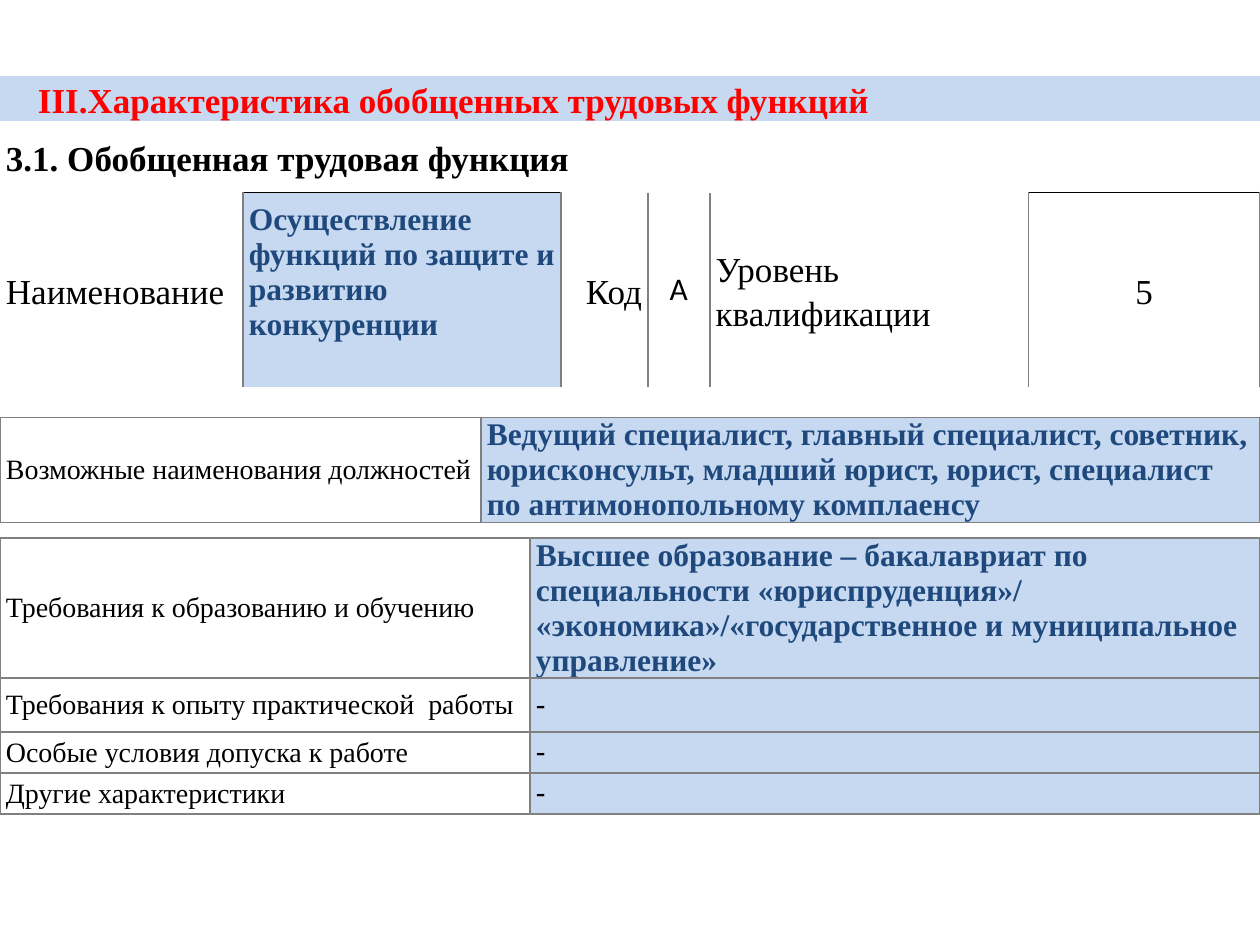
from dataclasses import dataclass

from lxml import etree
from pptx import Presentation
from pptx.dml.color import RGBColor
from pptx.enum.text import MSO_ANCHOR, PP_ALIGN
from pptx.oxml.ns import qn
from pptx.util import Pt

MIDDLE = MSO_ANCHOR.MIDDLE
LEFT, CENTER, RIGHT = PP_ALIGN.LEFT, PP_ALIGN.CENTER, PP_ALIGN.RIGHT
SCALE = 914400 / 126
SIDES = {"l": "a:lnL", "r": "a:lnR", "t": "a:lnT", "b": "a:lnB"}


@dataclass(frozen=True)
class Theme:
    serif: str = "Times New Roman"
    sans: str = "Calibri"
    black: str = "000000"
    red: str = "FF0000"
    navy: str = "1F497D"
    pale_blue: str = "C6D9F1"
    gray: str = "808080"
    large: int = 20
    medium: int = 18
    small: int = 16
    spacer: int = 6


THEME = Theme()
GRID = dict.fromkeys("lrtb", THEME.gray)
UPRIGHTS = dict.fromkeys("lr", THEME.gray)
FRAME = {**GRID, "t": THEME.black}

BASE = {"size": THEME.large, "font": THEME.serif, "color": THEME.black, "bold": False,
        "align": LEFT, "spacing": 1.0, "indent": 0, "bottom": 0, "fill": None, "borders": {}}
SPACED = {**BASE, "spacing": 1.15}
BANNER = {**SPACED, "color": THEME.red, "bold": True, "indent": 32, "fill": THEME.pale_blue}
HEADING = {**SPACED, "bold": True}
LABEL = {**BASE, "size": THEME.small, "borders": GRID}
ANSWER = {**BASE, "size": THEME.medium, "color": THEME.navy, "bold": True,
          "fill": THEME.pale_blue, "borders": GRID}
DASH = {**BASE, "size": THEME.medium, "font": THEME.sans, "fill": THEME.pale_blue, "borders": GRID}

COLUMNS = [243, 238, 49, 31, 87, 62, 319, 231]
ROWS = [
    (44, [(8, ["III.Характеристика обобщенных трудовых функций"], BANNER)]),
    (72, [(8, ["3.1. Обобщенная трудовая функция"], HEADING)]),
    (194, [
        (1, ["Наименование"], {**SPACED, "borders": {"r": THEME.gray}}),
        (3, ["Осуществление", "функций по защите и", "развитию", "конкуренции"],
         {**ANSWER, "borders": FRAME, "bottom": 35}),
        (1, ["Код"], {**SPACED, "align": RIGHT, "borders": UPRIGHTS}),
        (1, ["А"], {**BASE, "size": THEME.medium, "font": THEME.sans,
                    "align": CENTER, "borders": UPRIGHTS}),
        (1, ["Уровень квалификации"], {**SPACED, "borders": UPRIGHTS}),
        (1, ["5"], {**SPACED, "align": CENTER, "borders": FRAME}),
    ]),
    (15, [(8, [], BASE)]),
    (16, [(8, [], {**BASE, "borders": {"b": THEME.gray}})]),
    (104, [
        (2, ["Возможные наименования должностей"], LABEL),
        (6, ["Ведущий специалист, главный специалист, советник, юрисконсульт, "
             "младший юрист, юрист, специалист по антимонопольному комплаенсу"], ANSWER),
    ]),
    (16, [(8, [], {**BASE, "borders": {"t": THEME.gray, "b": THEME.gray}})]),
    (140, [
        (3, ["Требования к образованию и обучению"], LABEL),
        (5, ["Высшее образование – бакалавриат по специальности «юриспруденция»/",
             "«экономика»/«государственное и муниципальное управление»"], ANSWER),
    ]),
    (54, [(3, ["Требования к опыту практической  работы"], LABEL), (5, ["-"], DASH)]),
    (41, [(3, ["Особые условия допуска к работе"], LABEL), (5, ["-"], DASH)]),
    (41, [(3, ["Другие характеристики"], LABEL), (5, ["-"], DASH)]),
]


def px(length):
    return round(length * SCALE)


def set_values(target, values):
    for name, value in values.items():
        setattr(target, name, value)


def set_borders(cell, borders):
    properties = cell._tc.get_or_add_tcPr()
    for position, (side, tag) in enumerate(SIDES.items()):
        line = etree.Element(qn(tag), w=str(Pt(1)))
        if side in borders:
            fill = etree.SubElement(line, qn("a:solidFill"))
            etree.SubElement(fill, qn("a:srgbClr"), val=borders[side])
        else:
            etree.SubElement(line, qn("a:noFill"))
        properties.insert(position, line)


def format_cell(cell, style, borders):
    set_values(cell, {"vertical_anchor": MIDDLE, "margin_left": px(6), "margin_right": px(6),
                      "margin_top": 0, "margin_bottom": px(style["bottom"])})
    if style["fill"]:
        cell.fill.solid()
        cell.fill.fore_color.rgb = RGBColor.from_string(style["fill"])
    else:
        cell.fill.background()
    set_borders(cell, borders)
    paragraph = cell.text_frame.paragraphs[0]
    etree.SubElement(paragraph._p, qn("a:endParaRPr"), sz=str(THEME.spacer * 100))


def write_text(cell, lines, style):
    frame = cell.text_frame
    for index, line in enumerate(lines):
        paragraph = frame.add_paragraph() if index else frame.paragraphs[0]
        set_values(paragraph, {"alignment": style["align"], "line_spacing": style["spacing"]})
        if style["indent"]:
            paragraph._p.get_or_add_pPr().set("marL", str(px(style["indent"])))
        run = paragraph.add_run()
        run.text = line
        set_values(run.font, {"size": Pt(style["size"]), "name": style["font"],
                              "bold": style["bold"]})
        run.font.color.rgb = RGBColor.from_string(style["color"])


def fill_row(table, row, entries):
    column = 0
    for span, lines, style in entries:
        origin = table.cell(row, column)
        last = span - 1
        for offset in range(span):
            sides = "tb" + ("l" if offset == 0 else "") + ("r" if offset in (0, last) else "")
            borders = {side: color for side, color in style["borders"].items() if side in sides}
            format_cell(table.cell(row, column + offset), style, borders)
        if span > 1:
            origin.merge(table.cell(row, column + last))
        write_text(origin, lines, style)
        column += span


def add_function_table(slide, left, top, width):
    height = sum(row_height for row_height, _ in ROWS)
    shape = slide.shapes.add_table(len(ROWS), len(COLUMNS),
                                   px(left), px(top), px(width), px(height))
    table = shape.table
    set_values(table, {"first_row": False, "horz_banding": False})
    for column, column_width in zip(table.columns, COLUMNS):
        column.width = px(column_width * width / sum(COLUMNS))
    for index, (row_height, entries) in enumerate(ROWS):
        table.rows[index].height = px(row_height)
        fill_row(table, index, entries)


def main():
    presentation = Presentation()
    set_values(presentation, {"slide_width": px(1260), "slide_height": px(945)})
    slide = presentation.slides.add_slide(presentation.slide_layouts[6])
    add_function_table(slide, 0, 76, 1260)
    presentation.save("out.pptx")


if __name__ == "__main__":
    main()
